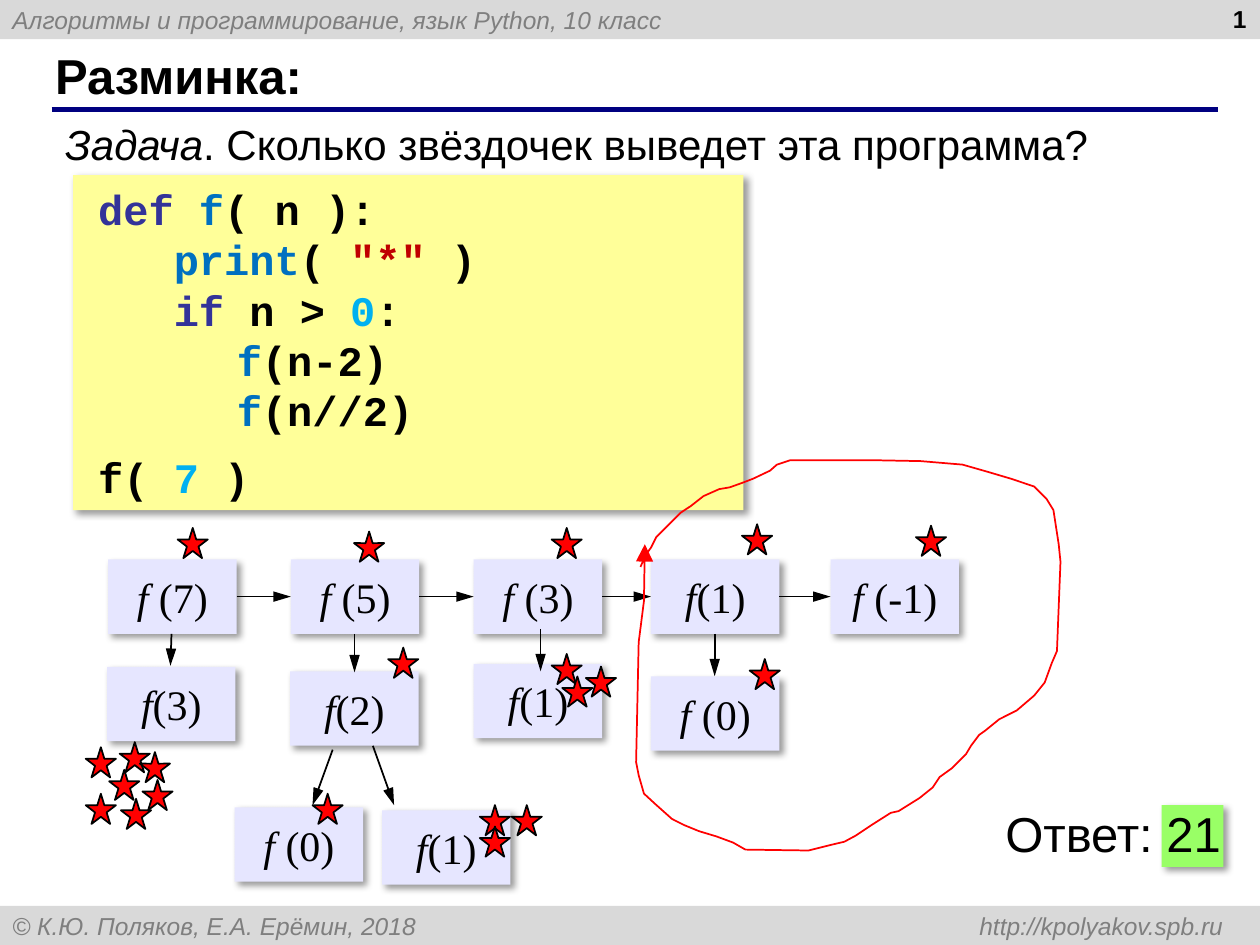
from typing import NamedTuple, Optional

from lxml import etree
from pptx import Presentation
from pptx.dml.color import RGBColor
from pptx.enum import shapes, text
from pptx.oxml import ns
from pptx.util import Pt

COLORS = {
    "bar": "D9D9D9", "bar_text": "7F7F7F", "rule": "000080", "black": "000000",
    "code_box": "FFFF99", "node": "E6E6FF", "answer": "99FF66", "star": "FF0000",
    "keyword": "333399", "name": "0070C0", "string": "C00000", "number": "00B0F0",
}
RECT = shapes.MSO_SHAPE.RECTANGLE
STAR = shapes.MSO_SHAPE.STAR_5_POINT
ALIGN = text.PP_ALIGN
MIDDLE = text.MSO_ANCHOR.MIDDLE
NODE_W, NODE_H, STAR_SIZE = 73.4, 42.5, 17.3
TOP_ROW = 319.7


class Run(NamedTuple):
    text: str
    color: str = "black"
    italic: bool = False


class Style(NamedTuple):
    size: float
    font: str = "Arial"
    bold: bool = False


class Node(NamedTuple):
    x: float
    y: float
    name: str
    arg: str


class Arrow(NamedTuple):
    x1: float
    y1: float
    x2: float
    y2: float


CODE = Style(24, "Courier New", True)
MATH = Style(24, "Times New Roman")

CODE_LINES = [
    [Run("def ", "keyword"), Run("f", "name"), Run("( n ):")],
    [Run("\t\tprint", "name"), Run("( "), Run('"*"', "string"), Run(" )")],
    [Run("\t\tif", "keyword"), Run(" n > "), Run("0", "number"), Run(":")],
    [Run("\t\t\tf", "name"), Run("(n-2)")],
    [Run("\t\t\tf", "name"), Run("(n//2)")],
    [Run("f( "), Run("7 ", "number"), Run(")")],
]
MAIN_CALLS = [
    Node(61.8, TOP_ROW, "f ", "(7)"), Node(166.2, TOP_ROW, "f ", "(5)"),
    Node(270.7, TOP_ROW, "f ", "(3)"), Node(372, TOP_ROW, "f", "(1)"),
    Node(474.6, TOP_ROW, "f ", "(-1)"),
]
BRANCH_CALLS = [
    Node(61.2, 381, "f", "(3)"), Node(165.8, 383.6, "f", "(2)"),
    Node(270.7, 379.4, "f", "(1)"), Node(372, 386.5, "f ", "(0)"),
    Node(134.1, 461.3, "f ", "(0)"), Node(218.3, 463, "f", "(1)"),
]
BRANCH_ARROWS = [
    Arrow(98, 362.2, 97.4, 380.5), Arrow(202.6, 362.2, 202.6, 384.2),
    Arrow(308.9, 359.3, 308.9, 383.6), Arrow(408.4, 362.2, 408.4, 386.4),
    Arrow(190.1, 428.4, 178.6, 460.1), Arrow(213.1, 426.2, 225.2, 460.1),
]
STARS = [
    (101.5, 301.7), (202.3, 303.8), (315.2, 301.7), (424, 299.6), (523.4, 300.4),
    (428.4, 376.6), (221.8, 370.1), (315.2, 373.7), (334.8, 380.9), (321.3, 386.6),
    (178.6, 453.6), (274.2, 460.1), (292.4, 460.1), (274.2, 472.3),
    (49, 427), (68.4, 424.1), (79.9, 429.8), (62.4, 439.9),
    (81.4, 445.7), (49, 453.6), (69.1, 456.5),
]
LOOP = [
    (366, 324), (369, 317), (372, 313), (375, 307), (389, 293), (395, 289),
    (402, 283.5), (411, 279.5), (417, 278.5), (424, 276), (430.5, 273.5),
    (440, 269), (444, 265.5), (451.5, 263), (500, 263), (526, 263.5),
    (550, 265.5), (564, 269.5), (577.5, 273.5), (591, 278), (598, 285),
    (602, 291.5), (605, 311), (606, 321), (604, 372), (601, 379), (597, 390),
    (591, 397.5), (581, 406), (571, 411), (563, 417.5), (559.5, 420),
    (555, 426), (552, 431), (544, 439), (537, 444), (533, 450), (525.5, 456),
    (513.5, 463.5), (509, 464.5), (498, 471.5), (489, 477.5), (482.5, 481),
    (474, 483), (462, 486), (426, 485.5), (419, 481.5), (409.5, 478),
    (399.5, 475), (391, 471.5), (384, 468), (374.5, 459.5), (368, 453.5),
    (365, 443), (363.5, 435.5), (365, 367), (368, 343.5), (368.5, 311),
]


def rgb(name: str) -> RGBColor:
    return RGBColor.from_string(COLORS[name])


def sub(parent, tag: str, **attrs: str):
    return etree.SubElement(parent, ns.qn(tag), attrs)


def add_runs(p, runs: list[Run], style: Style) -> None:
    for run in runs:
        r = p.add_run()
        r.text = run.text
        r.font.size, r.font.name = Pt(style.size), style.font
        r.font.bold, r.font.italic = style.bold, run.italic
        r.font.color.rgb = rgb(run.color)


def set_indent(p, left: float, first: float) -> None:
    pPr = p._p.get_or_add_pPr()
    pPr.set("marL", str(Pt(left)))
    pPr.set("indent", str(Pt(first)))


def add_box(s, x: float, y: float, w: float, h: float, fill: str,
            kind=RECT, line: Optional[str] = None, shadow: bool = False):
    sp = s.shapes.add_shape(kind, Pt(x), Pt(y), Pt(w), Pt(h))
    sp.fill.solid()
    sp.fill.fore_color.rgb = rgb(fill)
    if line:
        sp.line.color.rgb, sp.line.width = rgb(line), Pt(1)
    else:
        sp.line.fill.background()
    sp.shadow.inherit = False
    if shadow:
        effects = sp._element.spPr.find(ns.qn("a:effectLst"))
        outer = sub(effects, "a:outerShdw", blurRad=str(Pt(4)), dist=str(Pt(3)),
                    dir="2700000", algn="tl", rotWithShape="0")
        sub(sub(outer, "a:srgbClr", val=COLORS["black"]), "a:alpha", val="40000")
    sp.text_frame.vertical_anchor = MIDDLE
    sp.text_frame.paragraphs[0].alignment = ALIGN.LEFT
    return sp


def add_text(s, x: float, y: float, w: float, h: float, runs: list[Run],
             style: Style, align=ALIGN.LEFT, anchor=text.MSO_ANCHOR.TOP, wrap: bool = True):
    tf = s.shapes.add_textbox(Pt(x), Pt(y), Pt(w), Pt(h)).text_frame
    tf.word_wrap, tf.vertical_anchor = wrap, anchor
    p = tf.paragraphs[0]
    p.alignment = align
    add_runs(p, runs, style)
    return p


def add_head(sp, width: str) -> None:
    ln = sp._element.spPr.find(ns.qn("a:ln"))
    sub(ln, "a:tailEnd", type="triangle", w=width, len="lg")


def add_line(s, a: Arrow, color: str = "black", width: float = 1, head: bool = True) -> None:
    sp = s.shapes.add_connector(shapes.MSO_CONNECTOR.STRAIGHT,
                                Pt(a.x1), Pt(a.y1), Pt(a.x2), Pt(a.y2))
    sp.line.color.rgb, sp.line.width = rgb(color), Pt(width)
    if head:
        add_head(sp, "med")
    sub(sp._element.spPr, "a:effectLst")


def add_node(s, node: Node) -> None:
    sp = add_box(s, node.x, node.y, NODE_W, NODE_H, "node", shadow=True)
    p = sp.text_frame.paragraphs[0]
    p.alignment = ALIGN.CENTER
    add_runs(p, [Run(node.name, italic=True), Run(node.arg)], MATH)


def add_bar(s, y: float, label: str):
    p = add_box(s, 0, y, 720, 22.4, "bar").text_frame.paragraphs[0]
    add_runs(p, [Run(label, "bar_text", True)], Style(14))
    return p


def add_code(s) -> None:
    tf = add_box(s, 41.8, 100.1, 383, 191.5, "code_box", shadow=True).text_frame
    for i, runs in enumerate(CODE_LINES):
        p = tf.add_paragraph() if i else tf.paragraphs[0]
        p.alignment, p.line_spacing = ALIGN.JUSTIFY, Pt(28.8)
        set_indent(p, 14.4, -7.2)
        add_runs(p, runs, CODE)
    p.space_before = Pt(9.5)


def add_loop(s) -> None:
    """Hand-drawn outline around the f(1) subtree."""
    start, *rest = [(Pt(x), Pt(y)) for x, y in LOOP]
    builder = s.shapes.build_freeform(*start)
    builder.add_line_segments(rest, close=False)
    sp = builder.convert_to_shape()
    sp.fill.background()
    sp.line.color.rgb, sp.line.width = rgb("star"), Pt(1)
    sp.shadow.inherit = False
    add_head(sp, "lg")


def main() -> None:
    prs = Presentation()
    prs.slide_width, prs.slide_height = Pt(720), Pt(540)
    s = prs.slides.add_slide(prs.slide_layouts[6])

    add_bar(s, 0, "Алгоритмы и программирование, язык Python, 10 класс")
    footer = add_bar(s, 517.6, "© К.Ю. Поляков, Е.А. Ерёмин, 2018\thttp://kpolyakov.spb.ru")
    tabs = sub(footer._p.get_or_add_pPr(), "a:tabLst")
    sub(tabs, "a:tab", pos=str(Pt(692)), algn="r")
    add_line(s, Arrow(29.5, 62.6, 696.2, 62.6), "rule", 3, head=False)
    add_text(s, 24.5, 23.8, 659.5, 37.4, [Run("Разминка:")], Style(28, bold=True), anchor=MIDDLE)
    add_text(s, 551.5, -1.4, 167.8, 37.4, [Run("1")], Style(14, bold=True), ALIGN.RIGHT)
    task = [Run("Задача", italic=True), Run(". Сколько звёздочек выведет эта программа?")]
    set_indent(add_text(s, 30.2, 64.1, 667.4, 36.7, task, Style(24)), 28.8, -28.8)
    add_code(s)

    for node in MAIN_CALLS + BRANCH_CALLS:
        add_node(s, node)
    middle = TOP_ROW + NODE_H / 2
    for left, right in zip(MAIN_CALLS, MAIN_CALLS[1:]):
        add_line(s, Arrow(left.x + NODE_W, middle, right.x, middle))
    for arrow in BRANCH_ARROWS:
        add_line(s, arrow)
    for x, y in STARS:
        add_box(s, x, y, STAR_SIZE, STAR_SIZE, "star", STAR, "black")
    add_loop(s)

    add_box(s, 663.8, 460.1, 35.3, 35.3, "answer", shadow=True)
    add_text(s, 567.4, 455.8, 139, 41, [Run("Ответ: 21")], Style(28), wrap=False)
    prs.save("out.pptx")


if __name__ == "__main__":
    main()
